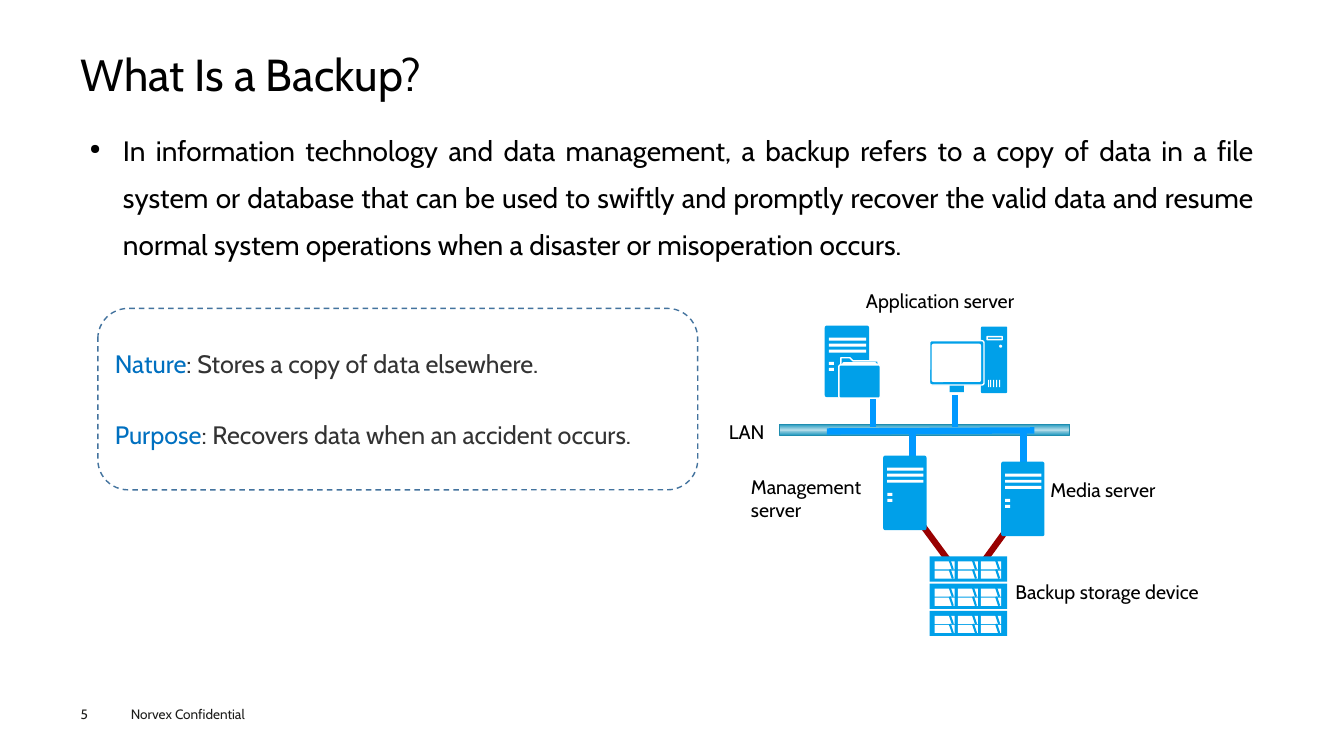
"""Build the slide that explains what a backup is."""
from copy import deepcopy
from dataclasses import dataclass, field
from typing import Any

from lxml.etree import SubElement
from pptx import Presentation
from pptx.dml.color import RGBColor
from pptx.enum.dml import MSO_LINE_DASH_STYLE as Dash
from pptx.enum.shapes import MSO_CONNECTOR_TYPE as Connector, MSO_SHAPE as Preset
from pptx.enum.text import MSO_ANCHOR as Anchor, PP_PARAGRAPH_ALIGNMENT as Align
from pptx.oxml.ns import qn
from pptx.util import Pt

SCALE = 9144
FONT = "Cabin"
COLORS = {
    "black": "000000", "white": "FFFFFF", "footer": "1D1D1B", "gray": "333333",
    "term": "0070C0", "icon": "00A0E9", "network": "0099FF", "storage": "990000",
    "frame": "43739E", "bar_edge": "2199BF", "bar_middle": "B0DBE8", "bar_line": "1F8DAF",
}
NO_MARGIN = (0, 0, 0, 0)
TEXT_MARGIN = (10, 5, 10, 5)


@dataclass
class Label:
    left: int
    top: int
    width: int
    height: int
    runs: list[tuple[str, str]]
    size: float = 14
    margins: tuple[int, int, int, int] = TEXT_MARGIN
    frame_format: dict[str, Any] = field(default_factory=dict)
    paragraph_format: dict[str, Any] = field(default_factory=dict)


@dataclass
class Box:
    left: int
    top: int
    width: int
    height: int
    fill: str | None = "white"
    line: str | None = None
    preset: Preset = Preset.RECTANGLE
    corner: float | None = None
    line_format: dict[str, Any] = field(default_factory=dict)


@dataclass
class Link:
    start: tuple[int, int]
    end: tuple[int, int]
    color: str = "network"
    weight: float = 4.5


def px(length: int) -> int:
    return length * SCALE


def color(name: str) -> RGBColor:
    return RGBColor.from_string(COLORS[name])


def apply_format(target: Any, values: dict[str, Any]) -> None:
    for name, value in values.items():
        setattr(target, name, value)


def paint(shape: Any, fill: str | None, line: str | None) -> None:
    shape.shadow.inherit = False
    if fill:
        shape.fill.solid()
        shape.fill.fore_color.rgb = color(fill)
    else:
        shape.fill.background()
    if line:
        shape.line.color.rgb = color(line)
        shape.line.width = Pt(1)
    else:
        shape.line.fill.background()


def draw_label(slide: Any, label: Label) -> Any:
    shape = slide.shapes.add_textbox(*map(px, (label.left, label.top, label.width, label.height)))
    sides = ("margin_left", "margin_top", "margin_right", "margin_bottom")
    margins = dict(zip(sides, map(px, label.margins)))
    apply_format(shape.text_frame, {"word_wrap": True, **margins, **label.frame_format})
    paragraph = shape.text_frame.paragraphs[0]
    apply_format(paragraph, label.paragraph_format)
    for text, tint in label.runs:
        run = paragraph.add_run()
        run.text = text
        apply_format(run.font, {"name": FONT, "size": Pt(label.size)})
        run.font.color.rgb = color(tint)
    return shape


def draw_box(slide: Any, box: Box) -> Any:
    shape = slide.shapes.add_shape(box.preset, *map(px, (box.left, box.top, box.width, box.height)))
    paint(shape, box.fill, box.line)
    apply_format(shape.line, box.line_format)
    if box.corner is not None:
        shape.adjustments[0] = box.corner
    return shape


def draw_link(slide: Any, link: Link) -> None:
    connector = slide.shapes.add_connector(Connector.STRAIGHT, *map(px, link.start + link.end))
    connector.line.color.rgb = color(link.color)
    connector.line.width = Pt(link.weight)
    SubElement(connector._element.spPr, qn("a:effectLst"))


def rounded(left: int, top: int, width: int, height: int,
            fill: str | None = "icon", line: str | None = None) -> Box:
    return Box(left, top, width, height, fill, line, Preset.ROUNDED_RECTANGLE, 0.05)


def draw_server(slide: Any, left: int, top: int, width: int, height: int) -> None:
    draw_box(slide, rounded(left, top, width, height))
    for row in range(3):
        draw_box(slide, Box(left + 4, top + 12 + 6 * row, width - 7, 3))
    for row in range(2):
        draw_box(slide, Box(left + 4, top + (height + 1) // 2 + 6 * row, 5, 3))


def draw_folder(slide: Any) -> None:
    builder = slide.shapes.build_freeform(834, 355, scale=SCALE)
    builder.add_line_segments([(843, 355), (846, 358), (871, 358), (871, 378), (834, 378)])
    paint(builder.convert_to_shape(), "icon", "white")
    draw_box(slide, rounded(836, 360, 33, 22, "white", "white"))
    draw_box(slide, rounded(832, 362, 41, 33, "icon", "white"))


def draw_computer(slide: Any) -> None:
    draw_box(slide, rounded(973, 324, 26, 66))
    draw_box(slide, rounded(979, 334, 15, 3, None, "white"))
    draw_box(slide, Box(991, 342, 3, 3, preset=Preset.OVAL))
    for vent in range(5):
        draw_box(slide, Box(980 + 11 * vent // 4, 377, 1, 7))
    draw_box(slide, Box(942, 382, 14, 7, "icon"))
    draw_box(slide, rounded(922, 338, 54, 44, "icon", "white"))
    draw_box(slide, rounded(924, 341, 49, 38, "white"))


def draw_storage_unit(slide: Any, left: int, top: int) -> None:
    draw_box(slide, Box(left, top, 77, 25, "icon"))
    for row in range(2):
        for column in range(3):
            x, y = left + 5 + 23 * column, top + 5 + 9 * row
            draw_box(slide, Box(x, y, 20, 8))
            draw_link(slide, Link((x + 15, y - 1), (x + 18, y + 8), "icon", 1.5))


def draw_network_bar(slide: Any) -> None:
    bar = draw_box(slide, Box(773, 421, 288, 11, line="bar_line", line_format={"width": Pt(0.75)}))
    bar.fill.gradient()
    bar.fill.gradient_angle = 90
    stops = bar._element.spPr.find(".//" + qn("a:gsLst"))
    stops.append(deepcopy(stops[0]))
    tints = ("bar_edge", "bar_middle", "bar_edge")
    for index, (stop, tint) in enumerate(zip(bar.fill.gradient_stops, tints)):
        stop.position = index / 2
        stop.color.rgb = color(tint)


def add_bullet(shape: Any, indent: int) -> None:
    properties = shape.text_frame.paragraphs[0]._p.get_or_add_pPr()
    properties.set("marL", str(px(indent)))
    properties.set("indent", str(-px(indent)))
    SubElement(properties, qn("a:buSzPct"), val="50000")
    SubElement(properties, qn("a:buChar"), char="●")


TIGHT = {"line_spacing": 0.7}
DEFINITION = Label(80, 115, 1173, 533, [(
    "In information technology and data management, a backup refers to a copy of data in a file "
    "system or database that can be used to swiftly and promptly recover the valid data and resume "
    "normal system operations when a disaster or misoperation occurs.", "black")],
    20, (9, 4, 9, 4), paragraph_format={"alignment": Align.JUSTIFY, "line_spacing": 1.4})
LABELS = [
    Label(120, 695, 160, 27, [("Norvex Confidential", "footer")], 9.7),
    Label(80, 700, 55, 16, [("5", "footer")], 9.7, NO_MARGIN),
    Label(80, 49, 1173, 54, [("What Is a Backup?", "black")], 32, NO_MARGIN,
          {"vertical_anchor": Anchor.MIDDLE}, {"line_spacing": 0.9}),
    Label(1032, 476, 135, 27, [("Media server", "black")], paragraph_format=TIGHT),
    Label(713, 418, 58, 27, [("LAN", "black")], paragraph_format=TIGHT),
    Label(1007, 575, 199, 24, [("Backup storage device", "black")], margins=NO_MARGIN),
    Label(735, 466, 147, 57, [("Management server", "black")]),
    Label(849, 288, 180, 27, [("Application server", "black")], paragraph_format=TIGHT),
    Label(104, 411, 583, 40, [("Purpose", "term"), (": Recovers data when an accident occurs.", "gray")], 18),
    Label(104, 341, 667, 40, [("Nature", "term"), (": Stores a copy of data elsewhere.", "gray")], 18),
]
LINKS = [
    Link((972, 562), (1017, 500), "storage"), Link((945, 562), (903, 505), "storage"),
    Link((905, 491), (905, 428)), Link((1015, 491), (1015, 428)),
    Link((947, 392), (947, 424)), Link((866, 392), (866, 424)),
    Link((1026, 427), (820, 428)),
]
SERVERS = [(818, 323, 44, 71), (876, 452, 43, 74), (993, 458, 43, 74)]
FRAME = Box(97, 306, 595, 180, None, "frame", Preset.ROUNDED_RECTANGLE,
            line_format={"dash_style": Dash.DASH})


def main() -> None:
    presentation = Presentation()
    apply_format(presentation, {"slide_width": px(1333), "slide_height": px(750)})
    slide = presentation.slides.add_slide(presentation.slide_layouts[6])
    add_bullet(draw_label(slide, DEFINITION), 33)
    draw_network_bar(slide)
    for link in LINKS:
        draw_link(slide, link)
    for label in LABELS:
        draw_label(slide, label)
    for server in SERVERS:
        draw_server(slide, *server)
    draw_folder(slide)
    draw_computer(slide)
    for unit in range(3):
        draw_storage_unit(slide, 922, 552 + 27 * unit)
    draw_box(slide, FRAME)
    presentation.save("out.pptx")


if __name__ == "__main__":
    main()
